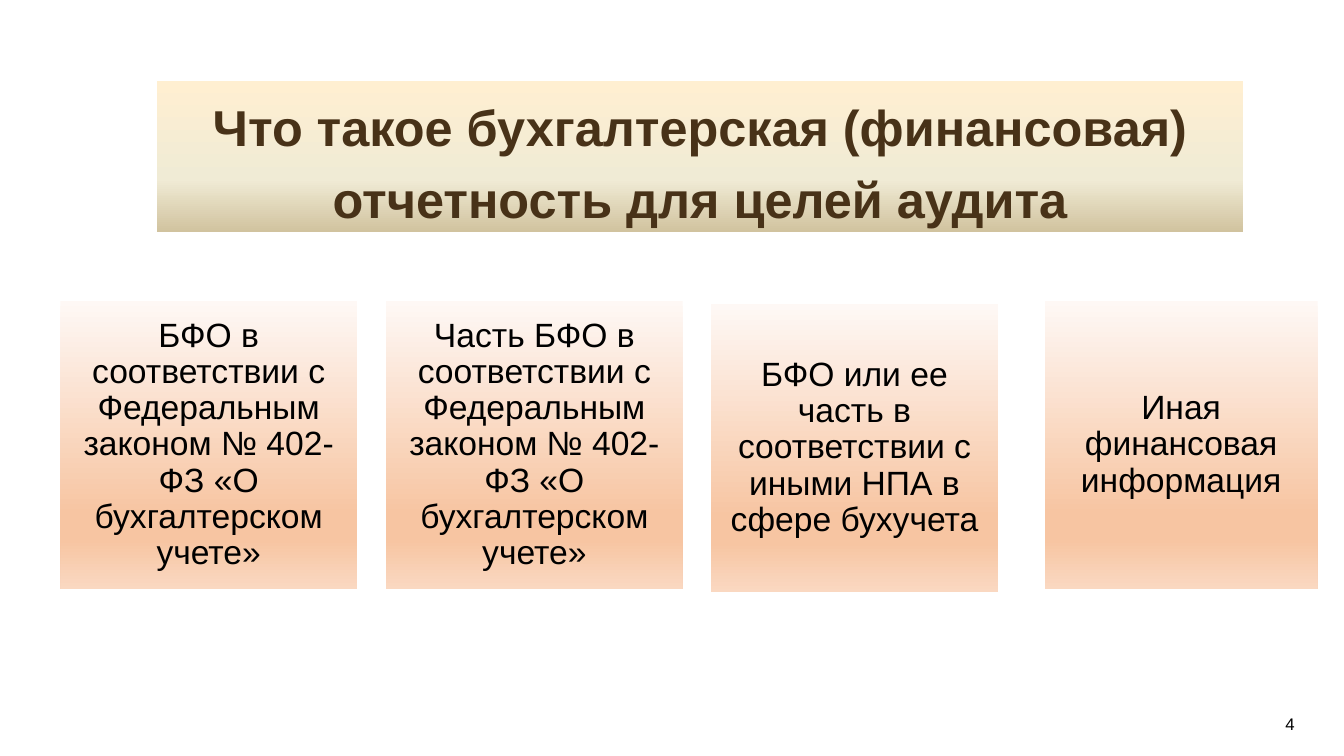
from copy import deepcopy

from pptx import Presentation
from pptx.dml.color import RGBColor
from pptx.enum.shapes import MSO_SHAPE
from pptx.enum.text import MSO_ANCHOR, PP_ALIGN
from pptx.oxml.ns import qn
from pptx.util import Inches, Pt

FONT = "Arial"
BLACK = RGBColor(0x00, 0x00, 0x00)
BROWN = RGBColor(0x48, 0x32, 0x18)
CREAM = RGBColor(0xFF, 0xEF, 0xD1)
IVORY = RGBColor(0xF0, 0xEB, 0xD5)
SAND = RGBColor(0xD1, 0xC3, 0x9F)
BLUSH = RGBColor(0xFE, 0xF8, 0xF5)
PEACH = RGBColor(0xF7, 0xC5, 0xA2)
LIGHT_PEACH = RGBColor(0xFA, 0xD8, 0xC1)

TITLE_STOPS = [(0, CREAM), (0.65, IVORY), (1, SAND)]
CARD_STOPS = [(0, BLUSH), (0.74, PEACH), (0.83, PEACH), (1, LIGHT_PEACH)]

CARD_HEIGHT = 2.85
# left, top, width, text
CARDS = [
    (0.6, 2.99, 2.94,
     "БФО в соответствии с Федеральным законом № 402-ФЗ «О бухгалтерском учете»"),
    (3.83, 2.99, 2.94,
     "Часть БФО в соответствии с Федеральным законом № 402-ФЗ «О бухгалтерском учете»"),
    (7.05, 3.02, 2.85,
     "БФО или ее часть в соответствии с иными НПА в сфере бухучета"),
    (10.36, 2.99, 2.71, "Иная финансовая информация"),
]


def fill_downwards(shape, stops):
    """Fill a shape with a gradient running from top to bottom."""
    shape.fill.gradient()
    shape.fill.gradient_angle = 270
    stop_list = shape.fill._xPr.find(".//" + qn("a:gsLst"))
    while len(stop_list) < len(stops):
        stop_list.append(deepcopy(stop_list[0]))
    for stop, (position, color) in zip(shape.fill.gradient_stops, stops):
        stop.position = position
        stop.color.rgb = color


def write(shape, text, size, color, bold=False):
    shape.text_frame.text = text
    paragraph = shape.text_frame.paragraphs[0]
    paragraph.font.name = FONT
    paragraph.font.size = Pt(size)
    paragraph.font.bold = bold
    paragraph.font.color.rgb = color
    return paragraph


def add_panel(slide, left, top, width, height, stops,
              text, size, color, line_spacing, bold=False):
    panel = slide.shapes.add_shape(
        MSO_SHAPE.RECTANGLE,
        Inches(left), Inches(top), Inches(width), Inches(height))
    panel.shadow.inherit = False
    panel.line.fill.background()
    fill_downwards(panel, stops)
    panel.text_frame.word_wrap = True
    panel.text_frame.vertical_anchor = MSO_ANCHOR.MIDDLE
    paragraph = write(panel, text, size, color, bold)
    paragraph.alignment = PP_ALIGN.CENTER
    paragraph.line_spacing = line_spacing


def add_page_number(slide, number):
    page_number = slide.shapes.add_textbox(
        Inches(12.65), Inches(7.03), Inches(0.41), Inches(0.3))
    page_number.text_frame.word_wrap = True
    write(page_number, number, 12, BLACK)


def main():
    prs = Presentation()
    prs.slide_width = Inches(13.33)
    prs.slide_height = Inches(7.5)
    slide = prs.slides.add_slide(prs.slide_layouts[6])

    # Title banner
    add_panel(slide, 1.56, 0.8, 10.77, 1.5, TITLE_STOPS,
              "Что такое бухгалтерская (финансовая) отчетность для целей аудита",
              36, BROWN, 1.2, bold=True)

    add_page_number(slide, "4")

    # Kinds of reporting
    for left, top, width, text in CARDS:
        add_panel(slide, left, top, width, CARD_HEIGHT, CARD_STOPS,
                  text, 24, BLACK, 0.9)

    prs.save("out.pptx")


if __name__ == "__main__":
    main()
